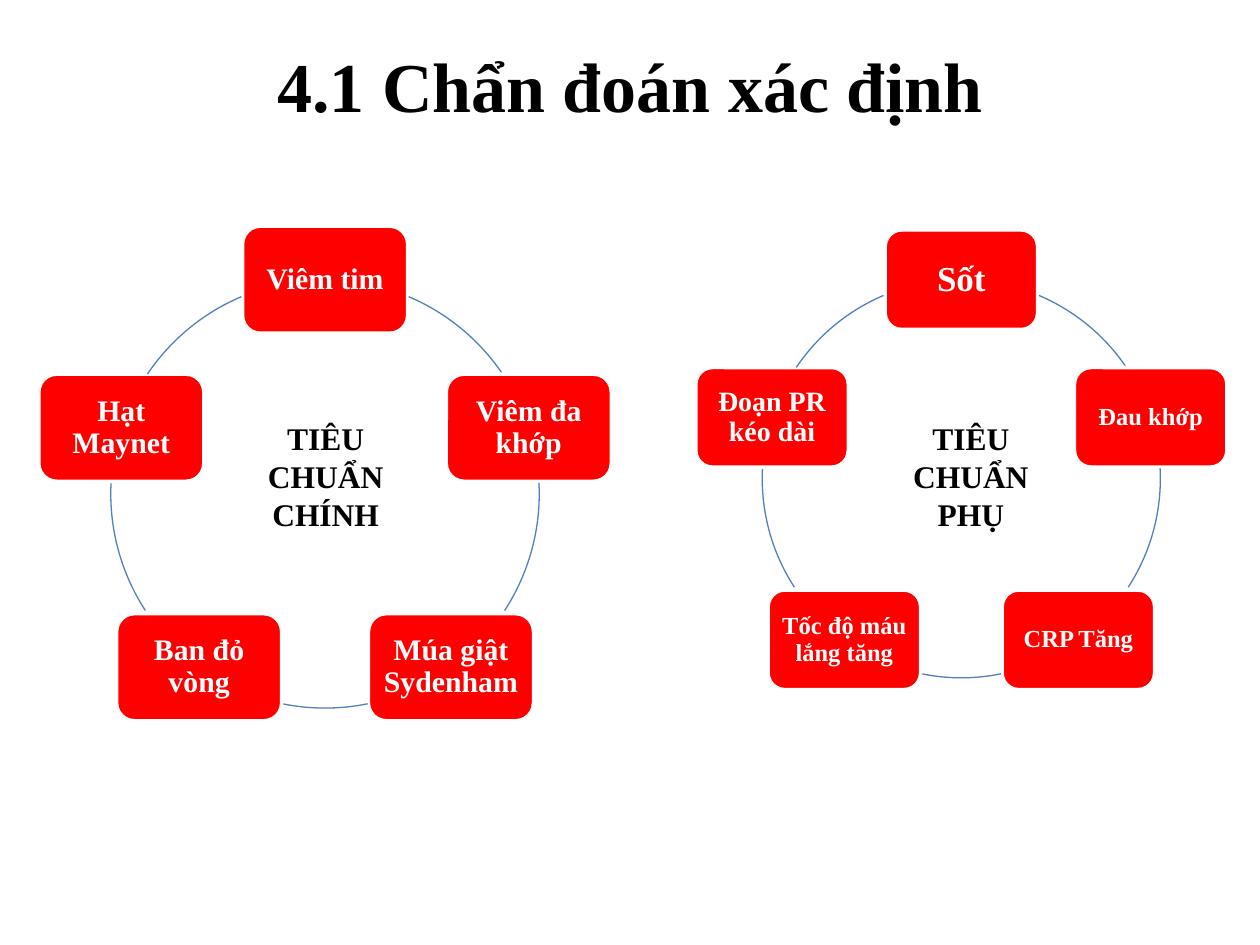
from math import cos, radians, sin

from pptx import Presentation
from pptx.dml.color import RGBColor
from pptx.enum.shapes import MSO_SHAPE
from pptx.enum.text import MSO_ANCHOR, MSO_AUTO_SIZE, PP_ALIGN
from pptx.util import Inches, Pt

ROUNDED, ARC = MSO_SHAPE.ROUNDED_RECTANGLE, MSO_SHAPE.ARC
MIDDLE, CENTER = MSO_ANCHOR.MIDDLE, PP_ALIGN.CENTER
FIT_SHAPE = MSO_AUTO_SIZE.SHAPE_TO_FIT_TEXT

FONT = "Times New Roman"
COLORS = {"node": "FF0000", "white": "FFFFFF", "arc": "4F81BD", "text": "000000"}

# Content: nodes run clockwise from the top as (lines, size, inset)
TITLE = "4.1 Chẩn đoán xác định"
CYCLES = [
    {
        "center": (2.58, 3.92), "radius": 1.7, "node": (1.31, 0.85),
        "label": "TIÊU CHUẨN CHÍNH", "label_box": (2, 3.28, 1.17, 1.01),
        "nodes": [
            (["Viêm tim"], 17, 0.07),
            (["Viêm đa khớp"], 17, 0.07),
            (["Múa giật", "Sydenham"], 17, 0.07),
            (["Ban đỏ vòng"], 17, 0.07),
            (["Hạt Maynet"], 17, 0.07),
        ],
    },
    {
        "center": (7.63, 3.8), "radius": 1.58, "node": (1.21, 0.79),
        "label": "TIÊU CHUẨN PHỤ", "label_box": (7.08, 3.28, 1.25, 1.01),
        "nodes": [
            (["Sốt"], 20, 0.08),
            (["Đau khớp"], 14, 0.06),
            (["CRP Tăng"], 14, 0.06),
            (["Tốc độ máu lắng tăng"], 14, 0.06),
            (["Đoạn PR kéo dài"], 16, 0.07),
        ],
    },
]
# Visible part of the circle between neighbouring nodes, degrees clockwise from east
ARC_ANGLES = [(293, 326), (357, 33), (78.5, 101.5), (147, 183), (214, 247)]


def color(name):
    return RGBColor.from_string(COLORS[name])


def write(frame, lines, size, color_name):
    frame.word_wrap = True
    paragraph = frame.paragraphs[0]
    paragraph.alignment = CENTER
    for index, line in enumerate(lines):
        if index:
            paragraph.add_line_break()
        run = paragraph.add_run()
        run.text = line
        run.font.name, run.font.size, run.font.bold = FONT, Pt(size), True
        run.font.color.rgb = color(color_name)
    return paragraph


def add_arc(slide, center, radius, angles):
    left, top = center[0] - radius, center[1] - radius
    arc = slide.shapes.add_shape(
        ARC, *map(Inches, (left, top, 2 * radius, 2 * radius)))
    arc.shadow.inherit = False
    arc.fill.background()
    arc.line.color.rgb = color("arc")
    arc.line.width = Pt(0.75)
    for index, angle in enumerate(angles):
        arc.adjustments[index] = angle * 0.6  # 60000 units a degree, scaled by 100000


def add_node(slide, x, y, size, lines, font_size, inset):
    width, height = size
    node = slide.shapes.add_shape(
        ROUNDED, *map(Inches, (x - width / 2, y - height / 2, width, height)))
    node.shadow.inherit = False
    node.fill.solid()
    node.fill.fore_color.rgb = color("node")
    node.line.color.rgb = color("white")
    node.line.width = Pt(2)
    frame = node.text_frame
    frame.vertical_anchor = MIDDLE
    frame.margin_left = frame.margin_right = Inches(inset)
    frame.margin_top = frame.margin_bottom = Inches(inset)
    write(frame, lines, font_size, "white").line_spacing = 0.9


def add_cycle(slide, cycle):
    center, radius = cycle["center"], cycle["radius"]
    step = 360 / len(cycle["nodes"])
    for index, (lines, font_size, inset) in enumerate(cycle["nodes"]):
        angle = radians(index * step - 90)
        x = center[0] + radius * cos(angle)
        y = center[1] + radius * sin(angle)
        add_node(slide, x, y, cycle["node"], lines, font_size, inset)
        add_arc(slide, center, radius, ARC_ANGLES[index])
    # Label in the middle of the ring
    label = slide.shapes.add_textbox(*map(Inches, cycle["label_box"]))
    write(label.text_frame, [cycle["label"]], 18, "text")
    label.text_frame.auto_size = FIT_SHAPE


def main():
    presentation = Presentation()
    presentation.slide_width, presentation.slide_height = Inches(10), Inches(7.5)
    slide = presentation.slides.add_slide(presentation.slide_layouts[5])

    # Title
    title = slide.shapes.title
    title.left, title.top, title.width, title.height = map(Inches, (0.5, 0.17, 9, 1))
    title.text_frame.vertical_anchor = MIDDLE
    write(title.text_frame, [TITLE], 40, "text")

    # Two rings of criteria
    for cycle in CYCLES:
        add_cycle(slide, cycle)
    presentation.save("out.pptx")


if __name__ == "__main__":
    main()
